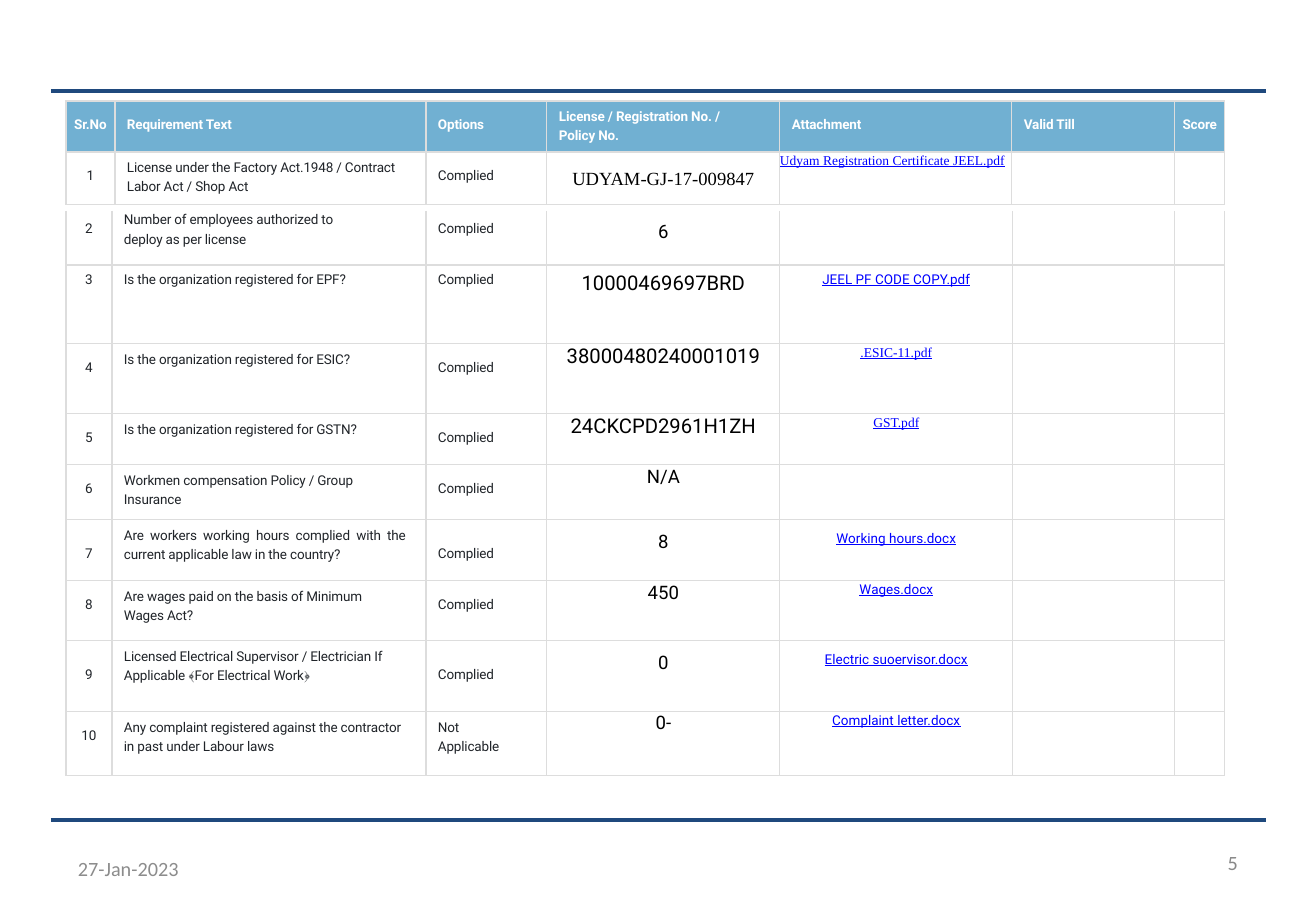
from dataclasses import dataclass, replace
from typing import Optional

import pptx
import pptx.dml.color
import pptx.enum.shapes
import pptx.enum.text
import pptx.oxml
import pptx.oxml.ns
import pptx.presentation
import pptx.shapes.autoshape
import pptx.slide
import pptx.table
import pptx.util
from lxml import etree

EMU_PER_PX = 7526
Align = pptx.enum.text.PP_ALIGN
qn = pptx.oxml.ns.qn


@dataclass(frozen=True)
class Theme:
    rule: str = "1F497D"
    header: str = "71B0D2"
    border: str = "DDDDDD"
    white: str = "FFFFFF"
    body: str = "202429"
    value: str = "000000"
    link: str = "0000FF"
    date: str = "8C8C8C"
    number: str = "898989"
    sans: str = "Roboto"
    serif: str = "Times New Roman"
    footer: str = "Calibri"
    small: int = 8
    medium: int = 11
    large: int = 12
    tracking: int = -10
    line_spacing: float = 1.24


THEME = Theme()


@dataclass(frozen=True)
class TextStyle:
    color: str
    size: int = THEME.small
    font: str = THEME.sans
    align: Align = Align.LEFT
    bold: bool = False
    underline: bool = False
    tracking: int = 0
    line_spacing: Optional[float] = None


HEADER = TextStyle(THEME.white, bold=True, tracking=THEME.tracking)
HEADER_CENTER = replace(HEADER, align=Align.CENTER)
HEADER_WRAP = replace(HEADER, line_spacing=THEME.line_spacing)
BODY = TextStyle(THEME.body, tracking=THEME.tracking)
BODY_CENTER = replace(BODY, align=Align.CENTER)
BODY_WRAP = replace(BODY, line_spacing=THEME.line_spacing)
BODY_JUSTIFIED = replace(BODY_WRAP, align=Align.JUSTIFY)
VALUE = TextStyle(THEME.value, THEME.medium, align=Align.CENTER)
VALUE_LARGE = replace(VALUE, size=THEME.large)
VALUE_SERIF = replace(VALUE, font=THEME.serif)
LINK = TextStyle(THEME.link, align=Align.CENTER, underline=True)
LINK_SERIF = replace(LINK, font=THEME.serif)
LINK_LEFT = replace(LINK_SERIF, align=Align.LEFT)


@dataclass(frozen=True)
class CellText:
    text: str
    style: TextStyle
    top: int = 1
    right: int = 0


@dataclass(frozen=True)
class Row:
    height: int
    cells: tuple[CellText, ...]
    fill: Optional[str] = None


def requirement(number: int, height: int, text: CellText, value: CellText,
                link: Optional[CellText] = None, label_top: int = 16,
                option: Optional[CellText] = None) -> Row:
    return Row(height, (
        CellText(str(number), BODY_CENTER, label_top),
        text,
        option or CellText("Complied", BODY, label_top),
        value,
        link or CellText("", LINK),
    ))


def wrapped(text: str, right: int = 20, style: TextStyle = BODY_WRAP) -> CellText:
    return CellText(text, style, 4, right)


LEFT = 66
HEADER_TOP, HEADER_COLUMNS = 101, (49, 311, 121, 233, 232, 163, 50)
HEADER_ROWS = (
    Row(51, (
        CellText("Sr.No", HEADER_CENTER, 16),
        CellText("Requirement Text", HEADER, 16),
        CellText("Options", HEADER, 16),
        CellText("License / Registration No. / Policy No.", HEADER_WRAP, 4, 30),
        CellText("Attachment", HEADER, 16),
        CellText("Valid Till", HEADER, 16),
        CellText("Score", HEADER_CENTER, 16),
    ), THEME.header),
    requirement(1, 53, wrapped("License under the Factory Act.1948 / Contract Labor Act / Shop Act"),
                CellText("UDYAM-GJ-17-009847", VALUE_SERIF, 17),
                CellText("Udyam Registration Certificate JEEL.pdf", LINK_LEFT)),
)
DETAIL_TOP, DETAIL_COLUMNS = 211, (46, 314, 121, 233, 233, 162, 50)
DETAIL_ROWS = (
    requirement(2, 54, CellText("Number of employees authorized to\ndeploy as per license", BODY),
                CellText("6", VALUE, 10), label_top=10),
    requirement(3, 79, CellText("Is the organization registered for EPF?", BODY, 7),
                CellText("10000469697BRD", VALUE_LARGE, 7),
                CellText("JEEL PF CODE COPY.pdf", LINK, 7), label_top=7),
    requirement(4, 70, wrapped("Is the organization registered for ESIC?"),
                CellText("38000480240001019", VALUE_LARGE),
                CellText(".ESIC-11.pdf", LINK_SERIF)),
    requirement(5, 51, wrapped("Is the organization registered for GSTN?"),
                CellText("24CKCPD2961H1ZH", VALUE_LARGE), CellText("GST.pdf", LINK_SERIF)),
    requirement(6, 55, wrapped("Workmen compensation Policy / Group Insurance", 50),
                CellText("N/A", VALUE)),
    requirement(7, 61, wrapped("Are workers working hours complied with the current applicable "
                               "law in the country?", style=BODY_JUSTIFIED),
                CellText("8", VALUE, 11), CellText("Working hours.docx", LINK, 11), 26),
    requirement(8, 60, wrapped("Are wages paid on the basis of Minimum Wages Act?", 50),
                CellText("450", VALUE), CellText("Wages.docx", LINK)),
    requirement(9, 71, wrapped("Licensed Electrical Supervisor / Electrician If Applicable "
                               "﴾For Electrical Work﴿"),
                CellText("0", VALUE, 11), CellText("Electric suoervisor.docx", LINK, 11), 26),
    requirement(10, 64, wrapped("Any complaint registered against the contractor in past "
                                "under Labour laws"),
                CellText("0-", VALUE), CellText("Complaint letter.docx", LINK),
                option=wrapped("Not Applicable", 40)),
)


def px(length: int) -> pptx.util.Emu:
    return pptx.util.Emu(length * EMU_PER_PX)


def rgb(color: str) -> pptx.dml.color.RGBColor:
    return pptx.dml.color.RGBColor.from_string(color)


def write_text(frame: pptx.text.text.TextFrame, text: str, style: TextStyle) -> None:
    frame.word_wrap = True
    frame.text = text
    for index, paragraph in enumerate(frame.paragraphs):
        paragraph.alignment = style.align
        paragraph.line_spacing = style.line_spacing
        if index:
            paragraph.space_before = pptx.util.Pt(2.2)
        font = paragraph.font
        font.name, font.size = style.font, pptx.util.Pt(style.size)
        font.bold, font.underline = style.bold, style.underline
        font.color.rgb = rgb(style.color)
        if style.tracking:
            paragraph._p.pPr.find(qn("a:defRPr")).set("spc", str(style.tracking))


def set_borders(cell: pptx.table._Cell, has_top: bool) -> None:
    properties = cell._tc.get_or_add_tcPr()
    for side in ("L", "R", "T", "B"):
        line = etree.SubElement(properties, qn(f"a:ln{side}"), w=str(pptx.util.Pt(0.75)))
        if side == "T" and not has_top:
            etree.SubElement(line, qn("a:noFill"))
        else:
            fill = etree.SubElement(line, qn("a:solidFill"))
            etree.SubElement(fill, qn("a:srgbClr"), val=THEME.border)


def add_grid(slide: pptx.slide.Slide, top: int, columns: tuple[int, ...],
             rows: tuple[Row, ...], has_top: bool) -> None:
    height = sum(row.height for row in rows)
    table = slide.shapes.add_table(len(rows), len(columns), px(LEFT), px(top),
                                   px(sum(columns)), px(height)).table
    table.first_row = table.horz_banding = False
    for column, width in zip(table.columns, columns):
        column.width = px(width)
    for row_index, row in enumerate(rows):
        table.rows[row_index].height = px(row.height)
        for column_index in range(len(columns)):
            cell = table.cell(row_index, column_index)
            set_borders(cell, has_top or row_index > 0)
            if row.fill:
                cell.fill.solid()
                cell.fill.fore_color.rgb = rgb(row.fill)
            else:
                cell.fill.background()
            content = row.cells[column_index] if column_index < len(row.cells) else CellText("", BODY)
            indented = content.style in (HEADER, HEADER_WRAP, BODY, BODY_WRAP, BODY_JUSTIFIED)
            cell.margin_left = px(12 if indented else 0)
            cell.margin_right, cell.margin_top = px(content.right), px(content.top)
            cell.margin_bottom = px(0)
            write_text(cell.text_frame, content.text, content.style)


def add_rule(slide: pptx.slide.Slide, y: int) -> None:
    rule = slide.shapes.add_connector(pptx.enum.shapes.MSO_CONNECTOR.STRAIGHT,
                                      px(51), px(y), px(1266), px(y))
    rule.line.color.rgb = rgb(THEME.rule)
    rule.line.width = pptx.util.Pt(2.25)
    etree.SubElement(rule._element.spPr, qn("a:effectLst"))


def add_footer(slide: pptx.slide.Slide, left: int, top: int, text: str, style: TextStyle) -> None:
    frame = slide.shapes.add_textbox(px(left), px(top), px(307), px(49)).text_frame
    frame.vertical_anchor = pptx.enum.text.MSO_ANCHOR.MIDDLE
    write_text(frame, text, style)


def main() -> None:
    presentation = pptx.Presentation()
    presentation.slide_width, presentation.slide_height = px(1316), px(911)
    slide = presentation.slides.add_slide(presentation.slide_layouts[6])
    for y in (91, 820):
        add_rule(slide, y)
    date_style = TextStyle(THEME.date, THEME.large, THEME.footer)
    add_footer(slide, LEFT, 844, "27-Jan-2023", date_style)
    add_footer(slide, 943, 838, "5", replace(date_style, color=THEME.number, align=Align.RIGHT))
    add_grid(slide, HEADER_TOP, HEADER_COLUMNS, HEADER_ROWS, has_top=True)
    add_grid(slide, DETAIL_TOP, DETAIL_COLUMNS, DETAIL_ROWS, has_top=False)
    presentation.save("out.pptx")


if __name__ == "__main__":
    main()
